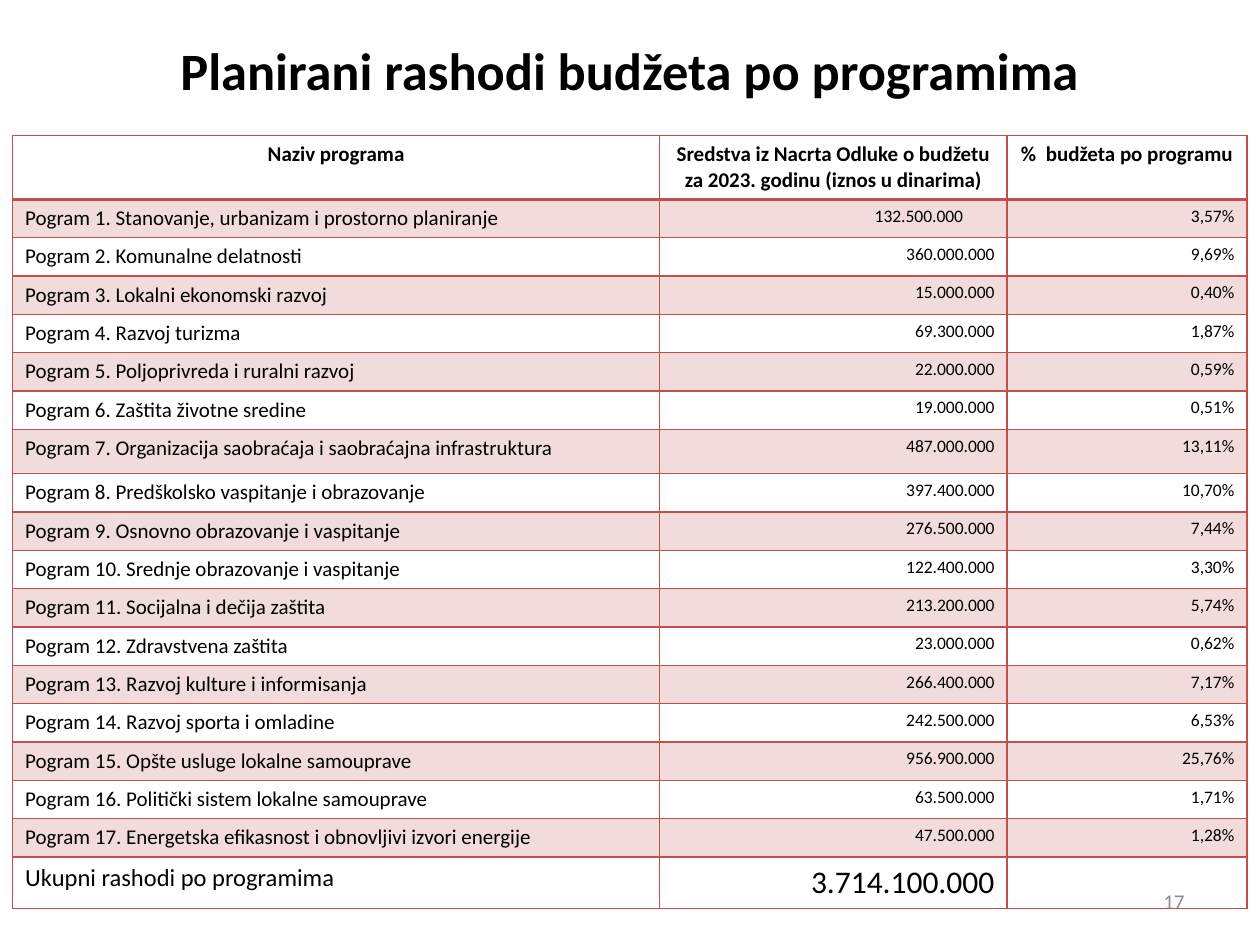
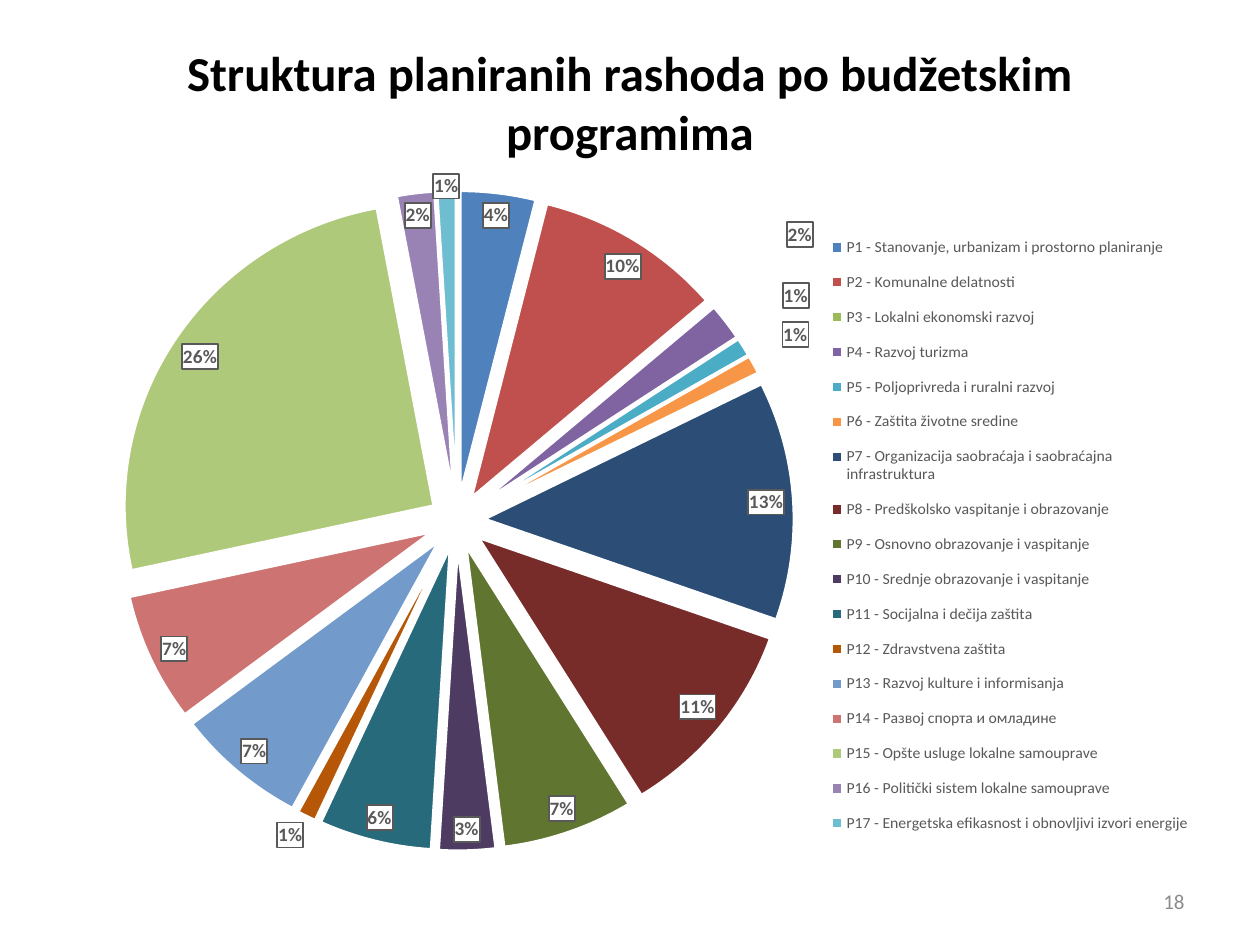
from copy import deepcopy

from lxml import etree
from pptx import Presentation
from pptx.chart.data import CategoryChartData
from pptx.dml.color import RGBColor
from pptx.enum.chart import XL_CHART_TYPE as CHART, XL_LABEL_POSITION as LABEL_POS, XL_LEGEND_POSITION as LEGEND_POS
from pptx.enum.text import MSO_ANCHOR as ANCHOR, MSO_AUTO_SIZE as AUTO_SIZE, PP_ALIGN as ALIGN
from pptx.oxml import parse_xml
from pptx.oxml.ns import nsdecls, qn
from pptx.util import Pt

FONT = "Calibri"
BLACK = RGBColor(0, 0, 0)
WHITE = RGBColor(0xFF, 0xFF, 0xFF)
GRAY = RGBColor(0x8C, 0x8C, 0x8C)
DARK_GRAY = RGBColor(0x59, 0x59, 0x59)
RED = RGBColor(0xC0, 0x50, 0x4D)
PINK = RGBColor(0xF2, 0xDC, 0xDB)
SLICES = [RGBColor.from_string(c) for c in (
    "4F81BD C0504D 9BBB59 8064A2 4BACC6 F79646 2C4D75 772C2A 5F7530 "
    "4D3B62 276A7C B65708 729ACA CD7371 AFC97A 9983B5 6FBDD1").split()]

HEADERS = ["Naziv programa",
           "Sredstva iz Nacrta Odluke o budžetu za 2023. godinu (iznos u dinarima)",
           "%  budžeta po programu "]
PROGRAMS = [
    ("Stanovanje, urbanizam i prostorno planiranje", "132.500.000", 3.57),
    ("Komunalne delatnosti", "360.000.000", 9.69),
    ("Lokalni ekonomski razvoj", "15.000.000", 0.40),
    ("Razvoj turizma", "69.300.000", 1.87),
    ("Poljoprivreda i ruralni razvoj", "22.000.000", 0.59),
    ("Zaštita životne sredine", "19.000.000", 0.51),
    ("Organizacija saobraćaja i saobraćajna infrastruktura", "487.000.000", 13.11),
    ("Predškolsko vaspitanje i obrazovanje", "397.400.000", 10.70),
    ("Osnovno obrazovanje i vaspitanje", "276.500.000", 7.44),
    ("Srednje obrazovanje i vaspitanje", "122.400.000", 3.30),
    ("Socijalna i dečija zaštita", "213.200.000", 5.74),
    ("Zdravstvena zaštita", "23.000.000", 0.62),
    ("Razvoj kulture i informisanja", "266.400.000", 7.17),
    ("Razvoj sporta i omladine", "242.500.000", 6.53),
    ("Opšte usluge lokalne samouprave", "956.900.000", 25.76),
    ("Politički sistem lokalne samouprave", "63.500.000", 1.71),
    ("Energetska efikasnost i obnovljivi izvori energije", "47.500.000", 1.28),
]
CHART_NAMES = {14: "Развој спорта и омладине"}
CHART_VALUES = [4, 10, 0, 2, 1, 1, 13, 11, 7, 3, 6, 1, 7, 7, 26, 2, 1]
LABEL_SHIFTS = {2: (0.01, -0.1), 3: (0.05, -0.1), 4: (0.03, -0.05), 5: (0.02, -0.02)}


def style_font(font, size, color=BLACK, bold=False):
    """Set the shared typeface with a size, colour and weight."""
    font.name, font.size, font.bold = FONT, Pt(size), bold
    font.color.rgb = color


def write(tf, text, size, align=ALIGN.LEFT, color=BLACK, bold=False):
    """Write one run into the first paragraph of a text frame."""
    p = tf.paragraphs[0]
    p.alignment = align
    r = p.add_run()
    r.text = text
    style_font(r.font, size, color, bold)


def add_slide(prs, title, number, box, size):
    """Add a title-only slide with its title and slide number."""
    s = prs.slides.add_slide(prs.slide_layouts[5])
    sp = s.shapes.title
    sp.left, sp.top, sp.width, sp.height = map(Pt, box)
    tf = sp.text_frame
    tf.word_wrap, tf.auto_size, tf.vertical_anchor = True, AUTO_SIZE.NONE, ANCHOR.MIDDLE
    write(tf, title, size, ALIGN.CENTER, bold=True)
    tf = s.shapes.add_textbox(Pt(516), Pt(500.5), Pt(168), Pt(28.75)).text_frame
    tf.word_wrap, tf.vertical_anchor = True, ANCHOR.MIDDLE
    write(tf, str(number), 12, ALIGN.RIGHT, GRAY)
    return s


def set_borders(cell, top=1, bottom=1):
    """Draw red lines on the four sides of a cell."""
    tc_pr = cell._tc.get_or_add_tcPr()
    for side, width in (("L", 1), ("R", 1), ("T", top), ("B", bottom)):
        tc_pr.append(parse_xml(
            f'<a:ln{side} {nsdecls("a")} w="{Pt(width)}"><a:solidFill>'
            f'<a:srgbClr val="{RED}"/></a:solidFill></a:ln{side}>'))


def fill_row(table, index, texts, sizes, aligns, bold=False, fill=None):
    """Write and format one table row."""
    for cell, text, size, align in zip(table.rows[index].cells, texts, sizes, aligns):
        set_borders(cell, 2.25 if index == 1 else 1, 2.25 if index == 0 else 1)
        if fill is None:
            cell.fill.background()
        else:
            cell.fill.solid()
            cell.fill.fore_color.rgb = fill
        if text:
            write(cell.text_frame, text, size, align, bold=bold)


def add_program_table(s):
    """Add the table of planned expenses by program."""
    total_row = len(PROGRAMS) + 1
    table = s.shapes.add_table(total_row + 1, 3, Pt(7.2), Pt(77.3), Pt(705.3), Pt(441)).table
    table.horz_banding = False
    for col, width in zip(table.columns, (369.8, 198.5, 137)):
        col.width = Pt(width)
    heights = {0: 36.6, 7: 25.3, total_row: 29.3}
    for i, row in enumerate(table.rows):
        row.height = Pt(heights.get(i, 21.92))
    aligns = (ALIGN.LEFT, ALIGN.RIGHT, ALIGN.RIGHT)
    fill_row(table, 0, HEADERS, (12, 12, 12), (ALIGN.CENTER,) * 3, bold=True)
    for i, (name, amount, share) in enumerate(PROGRAMS, 1):
        texts = (f"Pogram {i}. {name}", amount, f"{share:.2f}%".replace(".", ","))
        fill_row(table, i, texts, (12, 10, 10), aligns, fill=PINK if i % 2 else None)
    table.cell(1, 1).margin_right = Pt(25.2)
    fill_row(table, total_row, ("Ukupni rashodi po programima", "3.714.100.000", ""),
             (14, 18, 10), aligns)


def make_layout(**values):
    """Build a manual chart layout element."""
    items = "".join(f'<c:{k} val="{v}"/>' for k, v in values.items())
    return parse_xml(f'<c:layout {nsdecls("c")}><c:manualLayout>{items}'
                     '</c:manualLayout></c:layout>')


def place(parent, index, layout):
    """Put a layout into a chart part in place of any earlier one."""
    for old in parent.findall(qn("c:layout")):
        parent.remove(old)
    parent.insert(index, layout)


def add_percent_labels(series):
    """Add boxed percent labels and move those of the thin slices."""
    labels = series.data_labels
    labels.number_format, labels.number_format_is_linked = '0"%"', False
    labels.show_value = True
    labels.position = LABEL_POS.BEST_FIT
    style_font(labels.font, 11, DARK_GRAY, True)
    root = labels._element
    root.find(qn("c:txPr")).addprevious(parse_xml(
        f'<c:spPr {nsdecls("c", "a")}><a:solidFill><a:srgbClr val="{WHITE}"/></a:solidFill>'
        f'<a:ln w="{Pt(1)}"><a:solidFill><a:srgbClr val="{DARK_GRAY}"/></a:solidFill></a:ln>'
        '</c:spPr>'))
    leader = root.find(qn("c:showLeaderLines"))
    if leader is not None:
        leader.set("val", "0")
    shared = [e for e in root if e.tag != qn("c:showLeaderLines")]
    for pos, (index, (x, y)) in enumerate(LABEL_SHIFTS.items()):
        label = etree.Element(qn("c:dLbl"))
        etree.SubElement(label, qn("c:idx")).set("val", str(index))
        label.append(make_layout(x=x, y=y))
        label.extend([deepcopy(e) for e in shared])
        root.insert(pos, label)


def add_program_pie(s):
    """Add the exploded pie of program shares with its legend."""
    data = CategoryChartData()
    data.categories = [f"P{i} - {CHART_NAMES.get(i, name)}"
                       for i, (name, _, _) in enumerate(PROGRAMS, 1)]
    data.add_series("Series 1", CHART_VALUES)
    chart = s.shapes.add_chart(CHART.PIE, Pt(54), Pt(90.7), Pt(628.6), Pt(410.4), data).chart
    chart.has_title = False
    style_font(chart.font, 10)
    plot = chart.plots[0]
    plot.vary_by_categories = True
    series = plot.series[0]
    for i, color in enumerate(SLICES):
        fmt = series.points[i].format
        fmt.fill.solid()
        fmt.fill.fore_color.rgb = color
        fmt.line.color.rgb = WHITE
        fmt.line.width = Pt(1.5)
    series._element.find(qn("c:dPt")).addprevious(
        parse_xml(f'<c:explosion {nsdecls("c")} val="9"/>'))
    add_percent_labels(series)
    place(chart._chartSpace.chart.plotArea, 0, make_layout(
        layoutTarget="inner", xMode="edge", yMode="edge", x=0.023, y=0.023, w=0.613, h=0.941))
    chart.has_legend = True
    legend = chart.legend
    legend.position, legend.include_in_layout = LEGEND_POS.RIGHT, False
    style_font(legend.font, 9, DARK_GRAY)
    place(legend._element, 1, make_layout(
        xMode="edge", yMode="edge", x=0.665, y=0.068, w=0.335, h=0.893))


def main():
    """Build and save both slides."""
    prs = Presentation()
    prs.slide_width, prs.slide_height = Pt(720), Pt(540)
    s = add_slide(prs, "Planirani rashodi budžeta po programima", 17, (53.3, 9.4, 613.4, 61.2), 30)
    add_program_table(s)
    s = add_slide(prs, "Struktura planiranih rashoda po budžetskim programima", 18,
                  (36, 21.6, 648, 72.7), 27.9)
    add_program_pie(s)
    prs.save("out.pptx")


if __name__ == "__main__":
    main()
